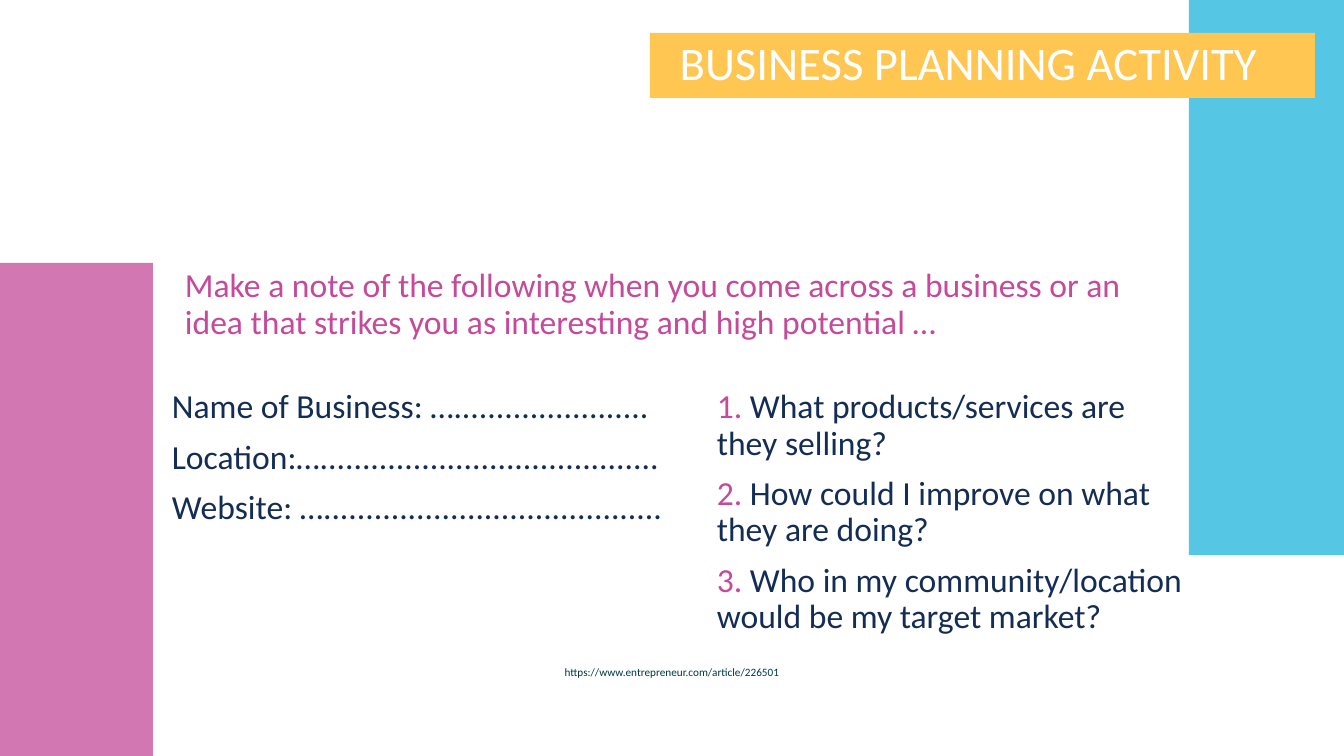
from pptx import Presentation
from pptx import util as u
from pptx.dml.color import RGBColor
from pptx.enum import shapes, text
from pptx.oxml.ns import qn
from lxml import etree

SLIDE_W, SLIDE_H = 1344, 756
PINK, BLUE, YELLOW = "C54A9A", "1EB3DD", "FFC652"
NAVY, TEAL, WHITE = "142D55", "003841", "FFFFFF"


def px(length):
    return u.Emu(round(length * 12192000 / SLIDE_W))


def color(hex_code):
    return RGBColor.from_string(hex_code)


def add_block(slide, left, top, width, height, fill, opacity=100):
    block = slide.shapes.add_shape(
        shapes.MSO_SHAPE.RECTANGLE, px(left), px(top), px(width), px(height))
    block.shadow.inherit = False
    block.line.fill.background()
    block.fill.solid()
    block.fill.fore_color.rgb = color(fill)
    if opacity < 100:
        rgb = block.fill._xPr.find(".//" + qn("a:srgbClr"))
        etree.SubElement(rgb, qn("a:alpha"), val=str(opacity * 1000))
    return block


def write(frame, paragraphs, size=24, align=text.PP_ALIGN.LEFT):
    """Fill a frame with paragraphs, each a list of (wording, hex colour) runs."""
    frame.word_wrap = True
    for index, runs in enumerate(paragraphs):
        paragraph = frame.add_paragraph() if index else frame.paragraphs[0]
        paragraph.alignment = align
        paragraph.line_spacing = 0.9
        paragraph.space_before = u.Pt(10 if index else 0)
        for wording, hex_code in runs:
            run = paragraph.add_run()
            run.text = wording
            run.font.name = "Calibri"
            run.font.size = u.Pt(size)
            run.font.color.rgb = color(hex_code)


def add_text(slide, left, top, width, height, paragraphs, **style):
    box = slide.shapes.add_textbox(px(left), px(top), px(width), px(height))
    write(box.text_frame, paragraphs, **style)


def add_title(slide, title):
    banner = add_block(slide, 650, 33, 665, 65, YELLOW)
    frame = banner.text_frame
    frame.vertical_anchor = text.MSO_ANCHOR.MIDDLE
    frame.margin_left, frame.margin_right = px(10), px(38)
    write(frame, [[(title, WHITE)]], size=33.3, align=text.PP_ALIGN.CENTER)


def main():
    prs = Presentation()
    prs.slide_width, prs.slide_height = px(SLIDE_W), px(SLIDE_H)
    slide = prs.slides.add_slide(prs.slide_layouts[6])

    instruction = ("Make a note of the following when you come across a business "
                   "or an idea that strikes you as interesting and high potential …")
    add_text(slide, 175, 264, 994, 88, [[(instruction, PINK)]])
    add_block(slide, -2, 263, 155, 493, PINK, opacity=75)
    add_block(slide, 1189, 0, 155, 555, BLUE, opacity=75)

    details = ["Name of Business: ….......................",
               "Location:…........................................",
               "Website: …........................................"]
    add_text(slide, 162, 385, 520, 169, [[(detail, NAVY)] for detail in details])

    questions = ["What products/services are they selling?",
                 "How could I improve on what they are doing?",
                 "Who in my community/location would be my target market?"]
    add_text(slide, 707, 385, 489, 270,
             [[(f"{number}. ", PINK), (question, NAVY)]
              for number, question in enumerate(questions, 1)])

    add_text(slide, 0, 662, SLIDE_W, 42,
             [[("https://www.entrepreneur.com/article/226501", TEAL)]],
             size=8, align=text.PP_ALIGN.CENTER)
    add_title(slide, "BUSINESS PLANNING ACTIVITY")
    prs.save("out.pptx")


if __name__ == "__main__":
    main()
